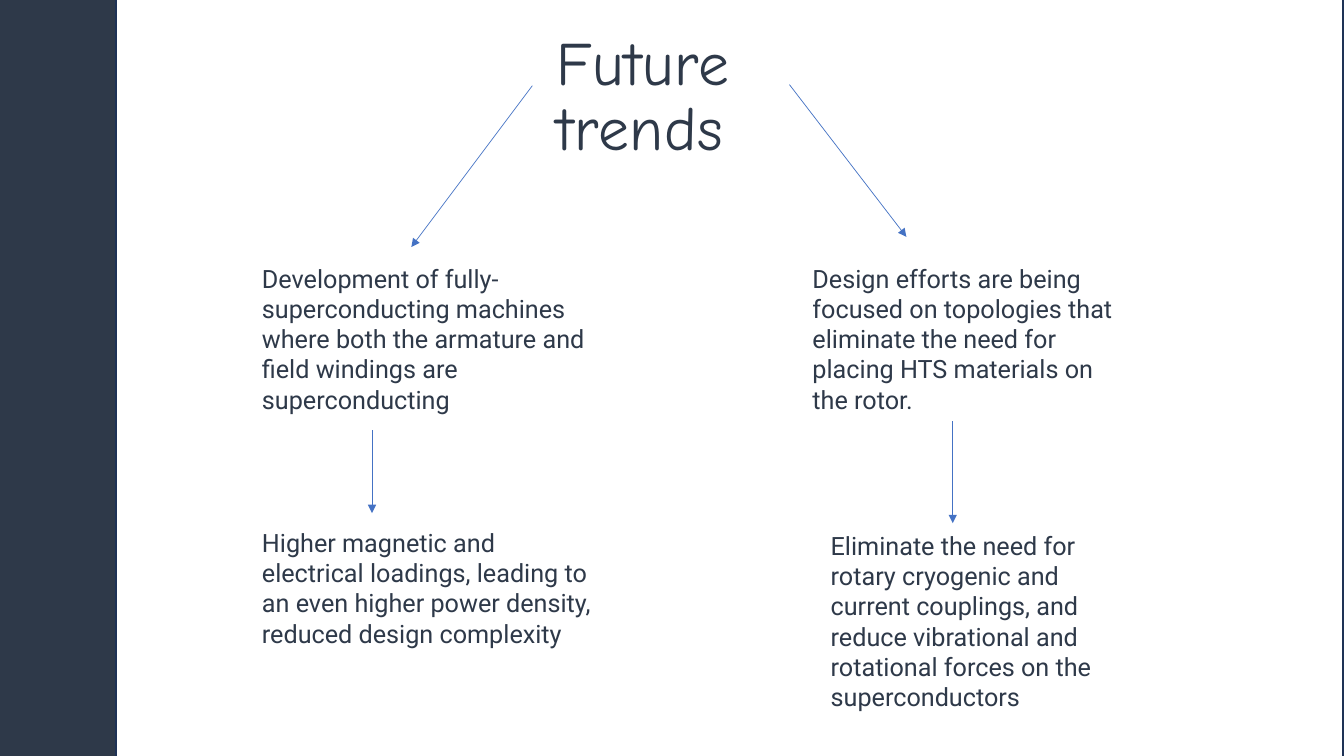
from dataclasses import dataclass

from pptx import Presentation
from pptx.dml.color import RGBColor
from pptx.enum import shapes, text
from pptx.oxml import ns, xmlchemy
from pptx.util import Inches, Pt


@dataclass(frozen=True)
class Theme:
    ink: RGBColor = RGBColor.from_string("2E3949")
    paper: RGBColor = RGBColor.from_string("FFFFFF")
    border: RGBColor = RGBColor.from_string("1E3256")
    arrow: RGBColor = RGBColor.from_string("4472C4")
    heading_font: str = "Comic Neue"
    body_font: str = "Roboto"
    heading_size: int = 44
    body_size: int = 18


THEME = Theme()
SLIDE_WIDTH, SLIDE_HEIGHT = 13.33, 7.5

BRANCHES = [
    {
        "box": (2.5, 0.85, 3.73, 6.65),
        "trend": "Development of fully-superconducting machines where both "
                 "the armature and field windings are superconducting",
        "trend_at": (0, 1.71, 3.73, 1.62),
        "effect": "Higher magnetic and electrical loadings, leading to an even "
                  "higher power density, reduced design complexity",
        "effect_at": (0, 4.33, 3.47, 1.62),
        "arrows": [((2.78, 0), (1.58, 1.6)), ((1.19, 3.42), (1.19, 4.24))],
    },
    {
        "box": (7.96, 0.85, 3.43, 6.65),
        "trend": "Design efforts are being focused on topologies that "
                 "eliminate the need for placing HTS materials on the rotor.",
        "trend_at": (0, 1.71, 3.25, 1.62),
        "effect": "Eliminate the need for rotary cryogenic and current "
                  "couplings, and reduce vibrational and rotational forces "
                  "on the superconductors",
        "effect_at": (0.18, 4.36, 3.25, 1.92),
        "arrows": [((-0.13, -0.01), (1.03, 1.5)), ((1.49, 3.33), (1.49, 4.34))],
    },
]


def inches(lengths):
    return [Inches(length) for length in lengths]


def add_run(paragraph, wording, font_name, size):
    run = paragraph.add_run()
    run.text = wording
    run.font.name = font_name
    run.font.size = Pt(size)
    run.font.color.rgb = THEME.ink
    return run


def add_panel(slide, box, fill):
    panel = slide.shapes.add_shape(shapes.MSO_SHAPE.RECTANGLE, *inches(box))
    panel.shadow.inherit = False
    panel.fill.solid()
    panel.fill.fore_color.rgb = fill
    panel.line.fill.background()
    return panel


def add_backdrop(slide, box):
    left, top, width, height = box
    add_panel(slide, box, THEME.ink)
    page_box = (left + 1.15, top - 0.07, width - 1.16, height + 0.17)
    page = add_panel(slide, page_box, THEME.paper)
    page.line.color.rgb = THEME.border
    page.line.width = Pt(1)


def place_title(slide, box, wording):
    title = slide.shapes.title
    title.left, title.top, title.width, title.height = inches(box)
    slide.shapes.element.append(title.element)
    frame = title.text_frame
    frame.margin_left = frame.margin_top = 0
    frame.margin_right = frame.margin_bottom = 0
    frame.word_wrap = True
    frame.auto_size = text.MSO_AUTO_SIZE.NONE
    frame.vertical_anchor = text.MSO_ANCHOR.TOP
    paragraph = frame.paragraphs[0]
    paragraph.alignment = text.PP_ALIGN.LEFT
    paragraph.line_spacing = 0.88
    run = add_run(paragraph, wording, THEME.heading_font, THEME.heading_size)
    run.font._element.set("spc", "40")


def add_statement(slide, box, wording):
    frame = slide.shapes.add_textbox(*inches(box)).text_frame
    frame.word_wrap = True
    frame.auto_size = text.MSO_AUTO_SIZE.SHAPE_TO_FIT_TEXT
    add_run(frame.paragraphs[0], wording, THEME.body_font, THEME.body_size)


def add_arrow(slide, start, end):
    arrow = slide.shapes.add_connector(
        shapes.MSO_CONNECTOR.STRAIGHT, *inches(start + end))
    arrow.line.color.rgb = THEME.arrow
    arrow.line.width = Pt(0.5)
    head = xmlchemy.OxmlElement("a:tailEnd")
    head.set("type", "triangle")
    properties = arrow.element.spPr
    properties.find(ns.qn("a:ln")).append(head)
    properties.append(xmlchemy.OxmlElement("a:effectLst"))


def add_branch(slide, branch):
    left, top = branch["box"][:2]
    for part in ("trend", "effect"):
        x, y, width, height = branch[f"{part}_at"]
        add_statement(slide, (left + x, top + y, width, height), branch[part])
    for start, end in branch["arrows"]:
        add_arrow(slide, (left + start[0], top + start[1]),
                  (left + end[0], top + end[1]))


def build_trends_slide(deck):
    slide = deck.slides.add_slide(deck.slide_layouts[5])
    add_backdrop(slide, (0, 0, SLIDE_WIDTH, SLIDE_HEIGHT))
    place_title(slide, (5.52, 0.33, 2.44, 1.62), "Future trends")
    for branch in BRANCHES:
        add_branch(slide, branch)


def main():
    deck = Presentation()
    deck.slide_width = Inches(SLIDE_WIDTH)
    deck.slide_height = Inches(SLIDE_HEIGHT)
    build_trends_slide(deck)
    deck.save("out.pptx")


if __name__ == "__main__":
    main()
